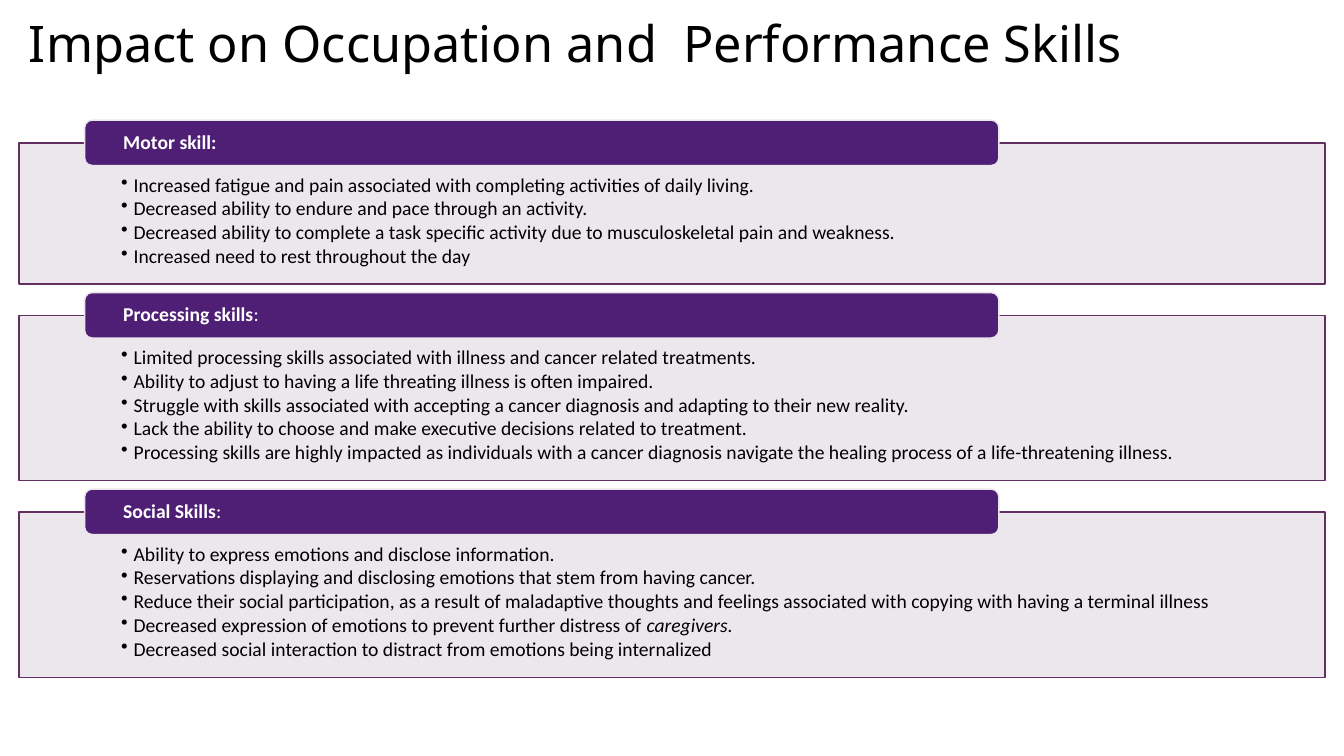
from lxml import etree
from pptx import Presentation
from pptx.dml.color import RGBColor
from pptx.enum.shapes import MSO_SHAPE as Shape
from pptx.enum.text import MSO_ANCHOR as Anchor, MSO_AUTO_SIZE as AutoSize, PP_ALIGN as Align
from pptx.oxml.ns import qn
from pptx.util import Pt


def color(value):
    return RGBColor.from_string(value)


def add_panel(kind, left, top, width, height, fill, line, margin):
    box = page.shapes.add_shape(kind, Pt(left), Pt(top), Pt(width), Pt(height))
    box.shadow.inherit = False
    box.fill.solid()
    box.fill.fore_color.rgb = color(fill)
    box.line.color.rgb = color(line)
    box.line.width = Pt(1)
    frame = box.text_frame
    frame.word_wrap = True
    frame.margin_left = frame.margin_right = Pt(margin)
    frame.margin_top = frame.margin_bottom = 0
    return box


PURPLE, PALE, PLUM = "4F1F76", "EAE5EB", "632E62"

# Each section: heading, whether its colon is bold, and bullets (text, italic ending)
sections = [
    ("Motor skill", True, [
        ("Increased fatigue and pain associated with completing activities of daily living.", ""),
        ("Decreased ability to endure and pace through an activity.", ""),
        ("Decreased ability to complete a task specific activity due to musculoskeletal pain and weakness.", ""),
        ("Increased need to rest throughout the day", ""),
    ]),
    ("Processing skills", False, [
        ("Limited processing skills associated with illness and cancer related treatments.", ""),
        ("Ability to adjust to having a life threating illness is often impaired.", ""),
        ("Struggle with skills associated with accepting a cancer diagnosis and adapting to their new reality.", ""),
        ("Lack the ability to choose and make executive decisions related to treatment.", ""),
        ("Processing skills are highly impacted as individuals with a cancer diagnosis navigate "
         "the healing process of a life-threatening illness.", ""),
    ]),
    ("Social Skills", False, [
        ("Ability to express emotions and disclose information.", ""),
        ("Reservations displaying and disclosing emotions that stem from having cancer.", ""),
        ("Reduce their social participation, as a result of maladaptive thoughts and feelings "
         "associated with copying with having a terminal illness", ""),
        ("Decreased expression of emotions to prevent further distress of ", "caregivers."),
        ("Decreased social interaction to distract from emotions being internalized", ""),
    ]),
]

deck = Presentation()
deck.slide_width, deck.slide_height = Pt(960), Pt(540)
page = deck.slides.add_slide(deck.slide_layouts[5])

# Title
title = page.shapes.title
title.left, title.top, title.width, title.height = Pt(13.5), Pt(13.5), Pt(828), Pt(89)
frame = title.text_frame
frame.text = "Impact on Occupation and  Performance Skills"
frame.auto_size = AutoSize.NONE
frame.word_wrap = True
frame.vertical_anchor = Anchor.TOP
frame.margin_top = 0
para = frame.paragraphs[0]
para.alignment = Align.LEFT
para.line_spacing = 0.9
para.font.name = "Noto Sans"
para.font.size = Pt(36)
para.font.color.rgb = color("000000")

# Sections, stacked with equal gaps; height follows the number of bullets
top = 102.2
for heading, bold_colon, bullets in sections:
    height = 32 + 17.2 * len(bullets)

    # Body panel
    body = add_panel(Shape.RECTANGLE, 13.5, top, 933, height, PALE, PLUM, 73)
    fill_color = body.fill._xPr.find(qn("a:solidFill"))[0]
    etree.SubElement(fill_color, qn("a:alpha"), val="90000")
    frame = body.text_frame
    frame.vertical_anchor = Anchor.TOP
    frame.margin_top = Pt(23)
    for index, (text, ending) in enumerate(bullets):
        para = frame.add_paragraph() if index else frame.paragraphs[0]
        para.alignment = Align.LEFT
        para.line_spacing = 0.9
        para.space_after = Pt(1.8)
        properties = para._p.get_or_add_pPr()
        properties.set("marL", str(Pt(9)))
        properties.set("indent", str(-Pt(9)))
        etree.SubElement(properties, qn("a:buChar"), char="•")
        para.font.name = "Calibri"
        para.font.size = Pt(14)
        para.font.color.rgb = color("000000")
        para.add_run().text = text
        if ending:
            span = para.add_run()
            span.text = ending
            span.font.italic = True

    # Heading tab across the panel's top edge
    tab = add_panel(Shape.ROUNDED_RECTANGLE, 60.5, top - 16.4, 653, 32.4, PURPLE, PALE, 26)
    tab.text_frame.vertical_anchor = Anchor.MIDDLE
    para = tab.text_frame.paragraphs[0]
    para.alignment = Align.LEFT
    para.line_spacing = 0.9
    para.font.name = "Calibri"
    para.font.size = Pt(14)
    para.font.color.rgb = color("FFFFFF")
    for text, bold in ((heading, True), (":", bold_colon)):
        span = para.add_run()
        span.text = text
        span.font.bold = bold

    top += height + 22.4

deck.save("out.pptx")
